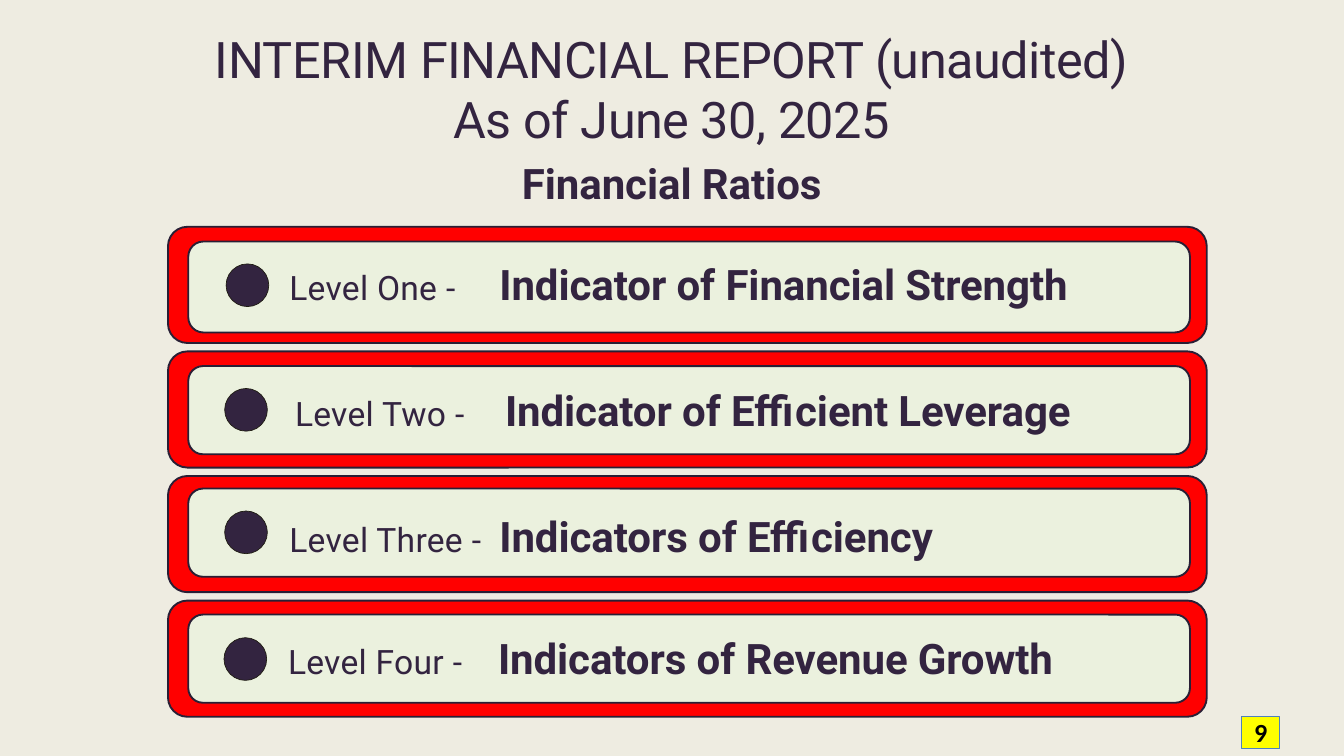
from lxml.etree import SubElement
from pptx import Presentation
from pptx.dml.color import RGBColor
from pptx.enum.shapes import MSO_SHAPE
from pptx.enum.text import MSO_ANCHOR, MSO_AUTO_SIZE, PP_ALIGN
from pptx.oxml.ns import qn
from pptx.util import Pt

PX = 9525  # EMU per px, 96 px to the inch
COLORS = {
    "background": "EEECE1",
    "frame": "FF0000",
    "panel": "EBF1DE",
    "outline": "291F35",
    "ink": "332440",
    "dot_line": "1E1C11",
    "badge": "FFFF00",
    "badge_line": "4F81BD",
    "black": "000000",
}


def add_span(para, text, size, color="ink", font="Roboto", bold=False, spacing=0):
    span = para.add_run()
    span.text = text
    span.font.size = Pt(size)
    span.font.name = font
    span.font.bold = bold
    span.font.color.rgb = RGBColor.from_string(COLORS[color])
    span.font._element.set("spc", str(round(spacing * 100)))


def add_filled(kind, left, top, width, height, fill, line, weight):
    shape = slide.shapes.add_shape(kind, left * PX, top * PX, width * PX, height * PX)
    shape.shadow.inherit = False
    shape.fill.solid()
    shape.fill.fore_color.rgb = RGBColor.from_string(COLORS[fill])
    shape.line.color.rgb = RGBColor.from_string(COLORS[line])
    shape.line.width = Pt(weight)
    return shape


deck = Presentation()
deck.slide_width = 1920 * PX
deck.slide_height = 1080 * PX
slide = deck.slides.add_slide(deck.slide_layouts[5])
slide.background.fill.solid()
slide.background.fill.fore_color.rgb = RGBColor.from_string(COLORS["background"])

# Title
title = slide.shapes.title
title.left, title.top, title.width, title.height = 240 * PX, 39 * PX, 1439 * PX, 263 * PX
frame = title.text_frame
frame.auto_size = MSO_AUTO_SIZE.NONE
frame.vertical_anchor = MSO_ANCHOR.TOP
frame.margin_left = frame.margin_right = frame.margin_bottom = 0
frame.margin_top = PX
title_lines = [
    ("INTERIM FINANCIAL REPORT (unaudited)", 54, False, -0.5, 1),
    ("As of June 30, 2025", 54, False, -0.5, 0),
    ("Financial Ratios", 45, True, -0.1, 9),
]
for index, (text, size, bold, spacing, before) in enumerate(title_lines):
    para = frame.paragraphs[0] if index == 0 else frame.add_paragraph()
    para.alignment = PP_ALIGN.CENTER
    para.space_before = Pt(before)
    add_span(para, text, size, bold=bold, spacing=spacing)

# Level rows: panel top and height, dot left and top, text left and top
levels = [
    ("Level One ", "Indicator of Financial Strength", (345, 130), (323, 377), (404, 364)),
    ("Level Two ", "Indicator of Efficient Leverage", (523, 126), (321, 555), (412, 544)),
    ("Level Three ", "Indicators of Efficiency", (698, 126), (321, 730), (404, 725)),
    ("Level Four ", "Indicators of Revenue Growth", (878, 126), (320, 911), (402, 899)),
]
for row, (label, indicator, panel, dot, text_at) in enumerate(levels):
    add_filled(MSO_SHAPE.ROUNDED_RECTANGLE, 240, 324 + 178 * row, 1484, 166,
               "frame", "outline", 2)
    add_filled(MSO_SHAPE.ROUNDED_RECTANGLE, 269, panel[0], 1431, panel[1],
               "panel", "outline", 2)
    add_filled(MSO_SHAPE.OVAL, *dot, 61, 61, "ink", "dot_line", 0.75)

    box = slide.shapes.add_textbox(text_at[0] * PX, text_at[1] * PX, 1280 * PX, 83 * PX)
    box.text_frame.word_wrap = True
    para = box.text_frame.paragraphs[0]
    para.space_before = Pt(5.8)
    # One tab stop lines up the indicators
    stops = SubElement(para._p.get_or_add_pPr(), qn("a:tabLst"))
    SubElement(stops, qn("a:tab"), pos=str(300 * PX), algn="l")
    add_span(para, label, 36, spacing=0.3)
    add_span(para, "- \t", 36)
    add_span(para, indicator, 45, bold=True, spacing=-0.1)

# Page number
badge = add_filled(MSO_SHAPE.RECTANGLE, 1774, 1024, 54, 45, "badge", "badge_line", 0.75)
frame = badge.text_frame
frame.margin_left = frame.margin_right = frame.margin_top = frame.margin_bottom = 0
frame.vertical_anchor = MSO_ANCHOR.TOP
para = frame.paragraphs[0]
para.alignment = PP_ALIGN.CENTER
add_span(para, "9", 28, color="black", font="Calibri", bold=True)

deck.save("out.pptx")
